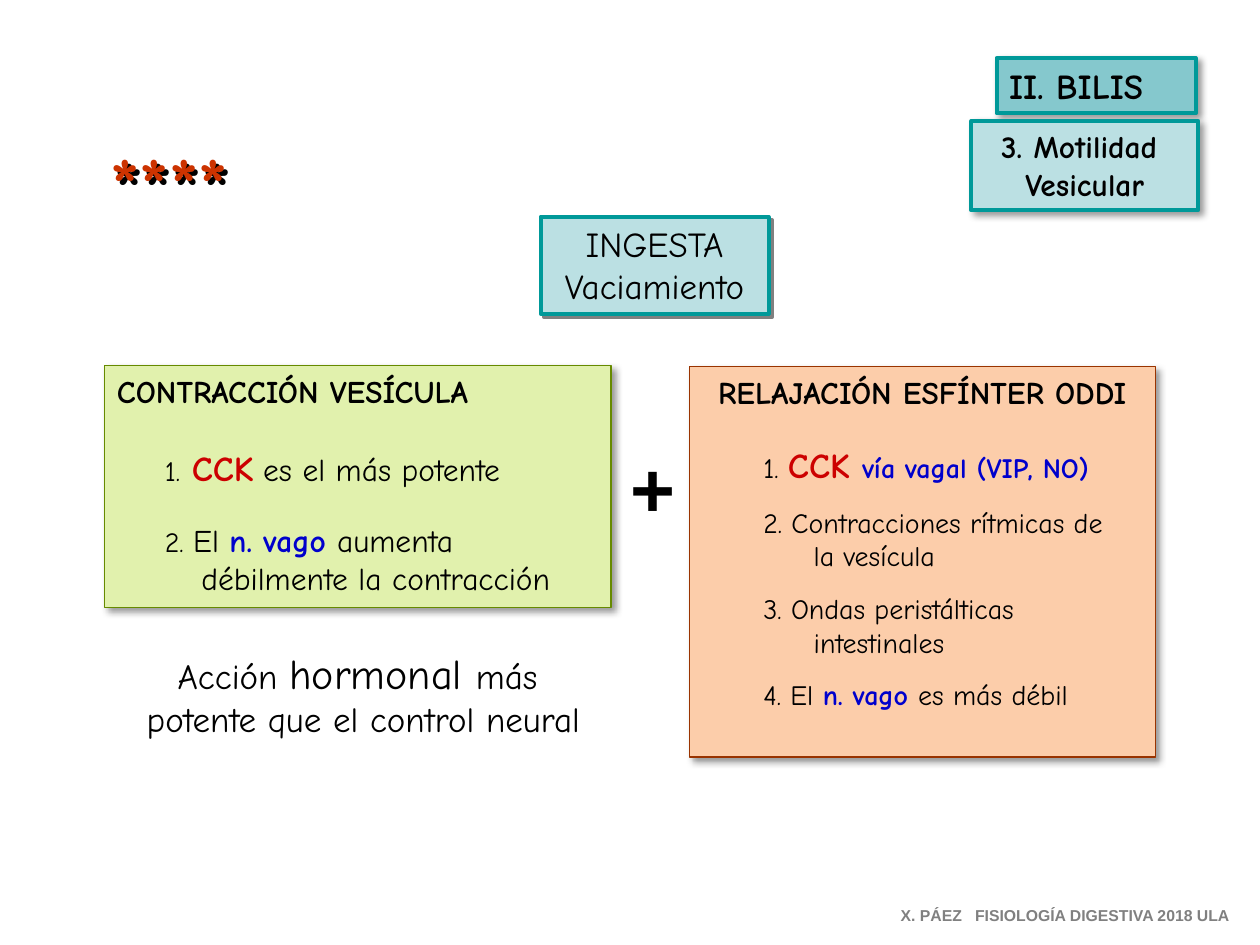
from dataclasses import dataclass

from lxml.etree import SubElement
from pptx import Presentation
from pptx.dml.color import RGBColor
from pptx.enum.shapes import MSO_SHAPE as Shape
from pptx.enum.text import MSO_ANCHOR as Anchor, PP_ALIGN as Align
from pptx.oxml.ns import qn
from pptx.util import Inches, Pt


@dataclass(frozen=True)
class Theme:
    body_font: str = "Comic Neue"
    plain_font: str = "Arial"
    black: str = "000000"
    red: str = "CC0000"
    blue: str = "0000CC"
    star: str = "CC3300"
    gray: str = "808080"
    teal: str = "009999"
    teal_mid: str = "85C8CD"
    teal_pale: str = "BBE0E3"
    green: str = "668A00"
    green_pale: str = "E1F1AD"
    brown: str = "993300"
    peach: str = "FCCDAA"
    symbol: int = 44
    accent: int = 24
    title: int = 20
    heading: int = 18
    item: int = 16
    footer: int = 9


THEME = Theme()
SOFT = dict(color=THEME.black, alpha=40, blur=4, distance=3)
HARD = dict(color=THEME.gray, alpha=100, blur=0, distance=2.8)
STAR_SHADOW = dict(color=THEME.black, alpha=100, blur=0, distance=3.2)


def add_shadow(shape, color, alpha, blur, distance):
    """Cast a shadow towards the lower right."""
    shape.shadow.inherit = False
    effects = shape._element.spPr.find(qn("a:effectLst"))
    outer = SubElement(effects, qn("a:outerShdw"), blurRad=str(Pt(blur)),
                       dist=str(Pt(distance)), dir="2700000", algn="tl", rotWithShape="0")
    tint = SubElement(outer, qn("a:srgbClr"), val=color)
    SubElement(tint, qn("a:alpha"), val=str(alpha * 1000))


def add_panel(page, box, fill, line, width, shadow):
    panel = page.shapes.add_shape(Shape.RECTANGLE, *map(Inches, box))
    panel.fill.solid()
    panel.fill.fore_color.rgb = RGBColor.from_string(fill)
    panel.line.color.rgb = RGBColor.from_string(line)
    panel.line.width = Pt(width)
    add_shadow(panel, **shadow)
    return panel


def add_label(page, box):
    return page.shapes.add_textbox(*map(Inches, box))


def write(shape, text, *, first=False, align=Align.LEFT, before=0, margin=0, **style):
    """Add a paragraph; text is a string or a list of (string, style changes)."""
    frame = shape.text_frame
    if first:
        frame.word_wrap = True
        frame.vertical_anchor = Anchor.TOP
    para = frame.paragraphs[0] if first else frame.add_paragraph()
    para.alignment = align
    para.space_before = Pt(before)
    if margin:
        props = para._p.get_or_add_pPr()
        props.set("marL", str(Inches(margin)))
        props.set("indent", "0")
    for words, changes in [(text, {})] if isinstance(text, str) else text:
        look = dict(size=THEME.item, font=THEME.body_font, color=THEME.black, bold=False)
        look.update(style, **changes)
        span = para.add_run()
        span.text = words
        span.font.name = look["font"]
        span.font.size = Pt(look["size"])
        span.font.bold = look["bold"]
        span.font.color.rgb = RGBColor.from_string(look["color"])


def add_lines(shape, lines, **style):
    for number, line in enumerate(lines):
        write(shape, line, first=number == 0, **style)


def add_teal_box(page, box, lines, fill=THEME.teal_pale, shadow=SOFT, **style):
    panel = add_panel(page, box, fill, THEME.teal, 2.25, shadow)
    add_lines(panel, lines, **style)


def add_contraction(page, box):
    panel = add_panel(page, box, THEME.green_pale, THEME.green, 0.75, SOFT)
    number = dict(size=THEME.item)
    text = dict(size=THEME.heading)
    write(panel, "CONTRACCIÓN VESÍCULA", first=True, bold=True, **text)
    write(panel, [("1.", number), (" ", dict(size=THEME.title)),
                  ("CCK", dict(size=THEME.title, color=THEME.red, bold=True)),
                  (" ", number), ("es el más potente", {})],
          before=21, margin=0.38, **text)
    write(panel, [("2. ", number), ("El ", {}),
                  ("n. vago ", dict(color=THEME.blue, bold=True)), ("aumenta", {})],
          before=19, margin=0.38, **text)
    write(panel, "débilmente la contracción", margin=0.67, **text)


def add_relaxation(page, box):
    panel = add_panel(page, box, THEME.peach, THEME.brown, 0.75, SOFT)
    blue = dict(color=THEME.blue, bold=True)
    write(panel, "RELAJACIÓN ESFÍNTER ODDI", first=True, align=Align.CENTER,
          size=THEME.heading, bold=True)
    items = [
        [[("1. ", {}), ("CCK ", dict(size=THEME.title, color=THEME.red, bold=True)),
          ("vía vagal (VIP, NO)", blue)]],
        ["2. Contracciones rítmicas de", "la vesícula"],
        ["3. Ondas peristálticas", "intestinales"],
        [[("4. El ", {}), ("n. vago ", blue), ("es más débil", {})]],
    ]
    for number, (lead, *rest) in enumerate(items):
        write(panel, lead, before=11 if number else 19, margin=0.49)
        for line in rest:
            write(panel, line, margin=0.89)


def add_conclusion(page, box):
    lines = [[("Acción ", {}), ("hormonal ", dict(size=THEME.accent)), ("más ", {})],
             "potente que el control neural"]
    add_lines(add_label(page, box), lines, align=Align.CENTER, size=THEME.title)


def add_stars(page, box):
    stars = add_label(page, box)
    write(stars, "****", first=True, size=THEME.symbol, color=THEME.star, bold=True)
    add_shadow(stars, **STAR_SHADOW)


def main():
    deck = Presentation()
    deck.slide_width, deck.slide_height = Inches(10), Inches(7.5)
    page = deck.slides.add_slide(deck.slide_layouts[6])

    add_relaxation(page, (5.47, 2.91, 3.7, 3.1))
    add_contraction(page, (0.83, 2.9, 4.02, 1.92))
    add_teal_box(page, (4.29, 1.72, 1.81, 0.77), ["INGESTA", "Vaciamiento"],
                 shadow=HARD, align=Align.CENTER, size=THEME.title)
    write(add_label(page, (4.91, 3.45, 0.56, 0.83)), "+", first=True,
          size=THEME.symbol, font=THEME.plain_font, bold=True)
    add_stars(page, (0.78, 1.03, 1.51, 0.84))
    add_teal_box(page, (7.91, 0.46, 1.58, 0.44), ["II. BILIS"],
                 fill=THEME.teal_mid, size=THEME.title, bold=True)
    add_teal_box(page, (7.71, 0.96, 1.8, 0.71), ["3. Motilidad ", "Vesicular"],
                 align=Align.CENTER, size=THEME.heading, bold=True)
    add_conclusion(page, (0.9, 5.09, 3.97, 0.84))
    write(add_label(page, (7.05, 7.14, 2.9, 0.25)),
          "X. PÁEZ   FISIOLOGÍA DIGESTIVA 2018 ULA", first=True,
          size=THEME.footer, font=THEME.plain_font, color=THEME.gray, bold=True)

    deck.save("out.pptx")


if __name__ == "__main__":
    main()
